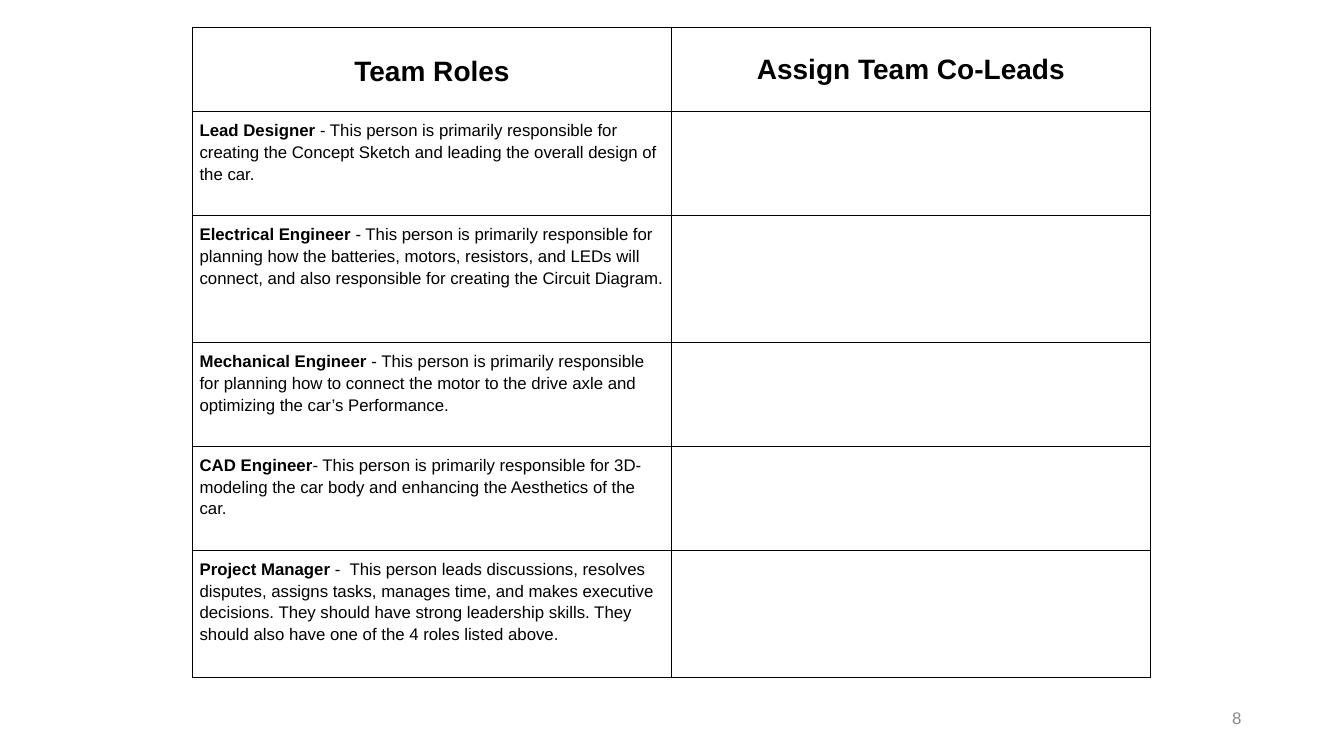
"""Build the team roles slide with its table of roles and co-leads."""
from lxml.etree import SubElement
from pptx import Presentation
from pptx.dml.color import RGBColor
from pptx.enum.text import MSO_ANCHOR as Anchor, PP_ALIGN as Align
from pptx.oxml.ns import qn
from pptx.util import Inches, Pt

BLACK = "000000"
GRAY = "888888"
HEADERS = ["Team Roles", "Assign Team Co-Leads"]
ROLES = [
    ("Lead Designer", " - This person is primarily responsible for creating the Concept Sketch "
     "and leading the overall design of the car."),
    ("Electrical Engineer ", "- This person is primarily responsible for planning how the batteries, "
     "motors, resistors, and LEDs will connect, and also responsible for creating the Circuit Diagram."),
    ("Mechanical Engineer", " - This person is primarily responsible for planning how to connect "
     "the motor to the drive axle and optimizing the car’s Performance."),
    ("CAD Engineer", "- This person is primarily responsible for 3D-modeling the car body "
     "and enhancing the Aesthetics of the car."),
    ("Project Manager", " -  This person leads discussions, resolves disputes, assigns tasks, "
     "manages time, and makes executive decisions. They should have strong leadership skills. "
     "They should also have one of the 4 roles listed above."),
]
COLUMN_WIDTH = 4.75
ROW_HEIGHTS = [0.84, 1.03, 1.26, 1.03, 1.03, 1.26]


def set_font(paragraph, size, color):
    paragraph.font.name = "Arial"
    paragraph.font.size = Pt(size)
    paragraph.font.color.rgb = RGBColor.from_string(color)


def add_borders(cell):
    properties = cell._tc.get_or_add_tcPr()
    for side in ("a:lnL", "a:lnR", "a:lnT", "a:lnB"):
        line = SubElement(properties, qn(side), w=str(Pt(1)))
        fill = SubElement(line, qn("a:solidFill"))
        SubElement(fill, qn("a:srgbClr"), val=BLACK)


presentation = Presentation()
presentation.slide_width = Inches(13.33)
presentation.slide_height = Inches(7.5)
slide = presentation.slides.add_slide(presentation.slide_layouts[6])

table = slide.shapes.add_table(
    len(ROW_HEIGHTS), len(HEADERS), Inches(1.91), Inches(0.27),
    Inches(COLUMN_WIDTH * len(HEADERS)), Inches(sum(ROW_HEIGHTS))).table
table.first_row = False
table.horz_banding = False
for column in table.columns:
    column.width = Inches(COLUMN_WIDTH)
for row, height in zip(table.rows, ROW_HEIGHTS):
    row.height = Inches(height)

for cell in table.iter_cells():
    cell.margin_left = cell.margin_right = Inches(0.07)
    cell.margin_top = cell.margin_bottom = Inches(0.07)
    add_borders(cell)
    cell.fill.background()
    set_font(cell.text_frame.paragraphs[0], 12, BLACK)

for column_index, header in enumerate(HEADERS):
    cell = table.cell(0, column_index)
    cell.vertical_anchor = Anchor.MIDDLE
    paragraph = cell.text_frame.paragraphs[0]
    paragraph.add_run().text = header
    paragraph.alignment = Align.CENTER
    set_font(paragraph, 20, BLACK)
    paragraph.font.bold = True
table.cell(0, 0).text_frame.paragraphs[0].line_spacing = 1.15

for row_index, (role, duties) in enumerate(ROLES, start=1):
    paragraph = table.cell(row_index, 0).text_frame.paragraphs[0]
    paragraph.line_spacing = 1.15
    role_run = paragraph.add_run()
    role_run.text = role
    role_run.font.bold = True
    paragraph.add_run().text = duties

page_number = slide.shapes.add_textbox(Inches(11.94), Inches(6.92), Inches(0.47), Inches(0.4))
page_number.text_frame.word_wrap = True
page_number.text_frame.vertical_anchor = Anchor.MIDDLE
paragraph = page_number.text_frame.paragraphs[0]
paragraph.text = "8"
paragraph.alignment = Align.RIGHT
set_font(paragraph, 12, GRAY)

presentation.save("out.pptx")
